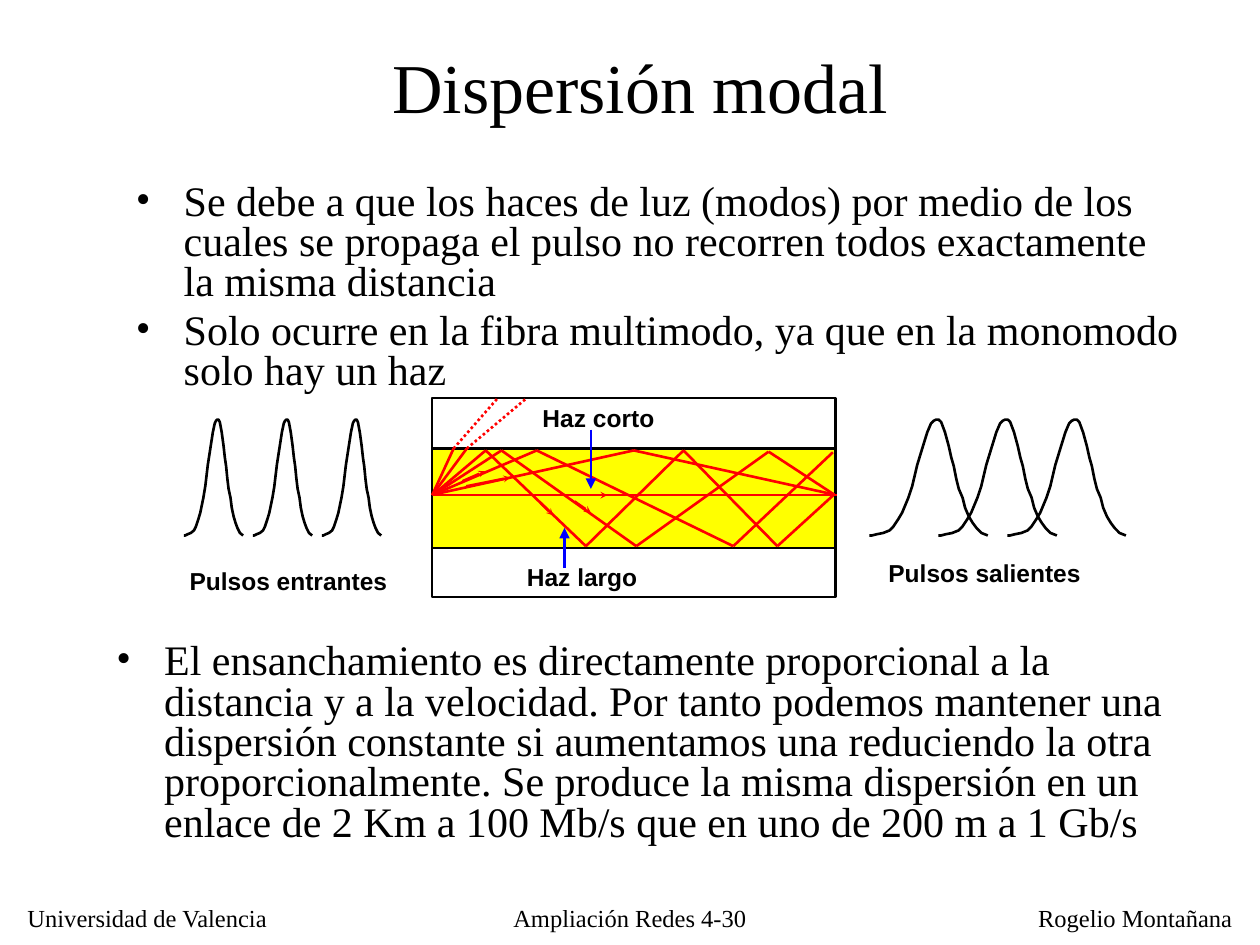
from itertools import pairwise
from typing import NamedTuple

from lxml.etree import SubElement
from pptx import Presentation
from pptx.dml.color import RGBColor
from pptx.enum.dml import MSO_LINE
from pptx.enum.shapes import MSO_CONNECTOR, MSO_SHAPE
from pptx.enum.text import MSO_ANCHOR, MSO_AUTO_SIZE, PP_ALIGN
from pptx.oxml.ns import qn
from pptx.util import Inches, Pt

# Places are (column, row) on a grid of 100 columns by 75 rows.
COLUMNS, ROWS = 100, 75
deck = Presentation()
deck.slide_width, deck.slide_height = Inches(10), Inches(7.5)
COLUMN, ROW = deck.slide_width / COLUMNS, deck.slide_height / ROWS

BLACK, RED, BLUE, YELLOW = "000000", "FF0000", "0000FF", "FFFF00"
SERIF, SANS = "Times New Roman", "Arial"
LINE_WIDTH = Pt(1.5)
INDENT = Inches(0.38)

# Outline of one pulse, in hundredths of an inch at full width
PULSE = [
    (0, 92), (2, 92), (6, 91), (11, 90), (16, 88), (19, 85), (23, 79), (26, 74),
    (31, 62), (34, 53), (38, 36), (42, 23), (46, 10), (49, 3), (51, 1), (53, 0),
    (55, 0), (57, 2), (60, 10), (63, 21), (65, 30), (67, 37), (69, 47), (71, 55),
    (74, 62), (76, 70), (79, 77), (82, 82), (85, 86), (89, 90), (94, 92),
]
PULSE_TOP, PULSE_STEP = 33.3, 5.48


Point = tuple[float, float]


class Area(NamedTuple):
    left: float
    top: float
    width: float
    height: float


class Label(NamedTuple):
    text: str
    area: Area
    font: str = SANS
    align: PP_ALIGN = PP_ALIGN.CENTER


class PulseTrain(NamedTuple):
    left: float
    stretch: float


class Ray(NamedTuple):
    points: list[Point]
    color: str = RED
    head: str = ""
    head_size: str = "sm"
    dotted: bool = False


def color_of(hex_code: str) -> RGBColor:
    return RGBColor.from_string(hex_code)


def place(area: Area) -> list[int]:
    left, top, width, height = area
    return [round(left * COLUMN), round(top * ROW), round(width * COLUMN), round(height * ROW)]


def set_font(paragraph, name: str, size: float, bold: bool = False) -> None:
    font = paragraph.font
    font.name, font.size, font.bold = name, Pt(size), bold
    font.color.rgb = color_of(BLACK)


def set_line(shape, color: str = BLACK) -> None:
    shape.line.color.rgb = color_of(color)
    shape.line.width = LINE_WIDTH


def add_label(page, label: Label) -> None:
    box = page.shapes.add_textbox(*place(label.area))
    box.text_frame.word_wrap = False
    box.text_frame.auto_size = MSO_AUTO_SIZE.SHAPE_TO_FIT_TEXT
    paragraph = box.text_frame.paragraphs[0]
    paragraph.text, paragraph.alignment = label.text, label.align
    set_font(paragraph, label.font, 14, bold=label.font == SANS)


def add_bullets(page, area: Area, texts: list[str]) -> None:
    box = page.shapes.add_textbox(*place(area))
    frame = box.text_frame
    frame.word_wrap = True
    for index, text in enumerate(texts):
        paragraph = frame.add_paragraph() if index else frame.paragraphs[0]
        paragraph.text = text
        paragraph.line_spacing, paragraph.space_before = 0.8, Pt(4.8)
        properties = paragraph._p.get_or_add_pPr()
        properties.set("marL", str(INDENT))
        properties.set("indent", str(-INDENT))
        SubElement(properties, qn("a:buFont")).set("typeface", SERIF)
        SubElement(properties, qn("a:buChar")).set("char", "•")
        set_font(paragraph, SERIF, 24)


def add_pulses(page, train: PulseTrain) -> None:
    hundredth = Inches(0.01)
    for number in range(3):
        builder = page.shapes.build_freeform(*PULSE[0], scale=(hundredth * train.stretch, hundredth))
        builder.add_line_segments(PULSE[1:], close=False)
        left = train.left + number * PULSE_STEP
        pulse = builder.convert_to_shape(round(left * COLUMN), round(PULSE_TOP * ROW))
        pulse.shadow.inherit = False
        pulse.fill.background()
        set_line(pulse)


def add_layer(page, area: Area, fill: str = "") -> None:
    layer = page.shapes.add_shape(MSO_SHAPE.RECTANGLE, *place(area))
    layer.shadow.inherit = False
    if fill:
        layer.fill.solid()
        layer.fill.fore_color.rgb = color_of(fill)
    else:
        layer.fill.background()
    set_line(layer)


def add_ray(page, ray: Ray) -> None:
    for start, end in pairwise(ray.points):
        ends = [round(value) for x, y in (start, end) for value in (x * COLUMN, y * ROW)]
        segment = page.shapes.add_connector(MSO_CONNECTOR.STRAIGHT, *ends)
        set_line(segment, ray.color)
        if ray.dotted:
            segment.line.dash_style = MSO_LINE.ROUND_DOT
        if ray.head:
            head = SubElement(segment.line._get_or_add_ln(), qn("a:tailEnd"))
            head.set("type", ray.head)
            head.set("w", ray.head_size)
            head.set("len", ray.head_size)
        SubElement(segment._element.spPr, qn("a:effectLst"))


SOURCE, EXIT = (34.4, 39.25), (66.2, 39.25)
TOP, BOTTOM, CLADDING = 35.75, 43.35, 31.6
RAYS = [
    Ray([SOURCE, (50.3, TOP), EXIT]),
    Ray([SOURCE, (42.6, TOP), (58.2, BOTTOM), (66.1, 35.9)]),
    Ray([SOURCE, (39.8, TOP), (50.5, BOTTOM), (61, 35.85), EXIT]),
    Ray([SOURCE, (38.55, TOP), (46.5, BOTTOM), (54.25, TOP), (61.7, BOTTOM), EXIT]),
    Ray([(34.4, 39.3), (66.4, 39.3)]),
    Ray([(37, 38.6), (40.5, 37.9)], head="stealth"),
    Ray([(36.7, 38.2), (38.5, 37.4)], head="stealth"),
    Ray([(46, 39.3), (48.2, 39.3)], head="stealth"),
    Ray([(42.9, 39.9), (43.9, 40.9)], head="stealth"),
    Ray([(45.6, 39.8), (46.9, 40.7)], head="stealth"),
    Ray([(34.3, 39.3), (37.05, 35.6)]),
    Ray([(37.05, 35.6), (41.8, CLADDING)], dotted=True),
    Ray([(34.3, 39.3), (36, 35.6)]),
    Ray([(36, 35.6), (39.5, CLADDING)], dotted=True),
    Ray([(44.8, 45.1), (44.8, 41.9)], BLUE, "triangle", "med"),
    Ray([(46.9, 34.1), (46.9, 38.8)], BLUE, "triangle", "med"),
]
LABELS = [
    Label("Universidad de Valencia", Area(1.2, 71.2, 21.3, 3.3), SERIF, PP_ALIGN.LEFT),
    Label("Ampliación Redes 4-30", Area(39, 71.2, 22, 3.1), SERIF),
    Label("Rogelio Montañana", Area(81.4, 71.2, 17.4, 3.3), SERIF, PP_ALIGN.LEFT),
    Label("Pulsos entrantes ", Area(13.8, 44.4, 18.2, 3.3)),
    Label("Pulsos salientes ", Area(69.3, 43.8, 17.7, 3.3)),
    Label("Haz largo", Area(40.2, 44.1, 12, 3.3)),
    Label("Haz corto", Area(41.5, 31.5, 12, 3.3)),
]
CAUSES = [
    "Se debe a que los haces de luz (modos) por medio de los cuales se propaga el pulso "
    "no recorren todos exactamente la misma distancia",
    "Solo ocurre en la fibra multimodo, ya que en la monomodo solo hay un haz",
]
EFFECT = (
    "El ensanchamiento es directamente proporcional a la distancia y a la velocidad. "
    "Por tanto podemos mantener una dispersión constante si aumentamos una reduciendo la otra "
    "proporcionalmente. Se produce la misma dispersión en un enlace de 2 Km a 100 Mb/s "
    "que en uno de 200 m a 1 Gb/s"
)


def main() -> None:
    page = deck.slides.add_slide(deck.slide_layouts[5])
    title = page.shapes.title
    title.left, title.top, title.width, title.height = place(Area(8.3, 2.8, 85, 8))
    title.text_frame.text = "Dispersión modal"
    title.text_frame.vertical_anchor = MSO_ANCHOR.MIDDLE
    heading = title.text_frame.paragraphs[0]
    heading.alignment = PP_ALIGN.CENTER
    set_font(heading, SERIF, 40)

    add_bullets(page, Area(9.8, 14.1, 85, 9.4), CAUSES)
    add_bullets(page, Area(8.25, 50.6, 86.6, 16), [EFFECT])
    for train in (PulseTrain(14.6, 0.5), PulseTrain(69, 1)):
        add_pulses(page, train)
    add_layer(page, Area(34.3, CLADDING, 32, 15.8))
    add_layer(page, Area(34.3, 35.6, 32, 7.9), YELLOW)
    for ray in RAYS:
        add_ray(page, ray)
    for label in LABELS:
        add_label(page, label)
    deck.save("out.pptx")


if __name__ == "__main__":
    main()
